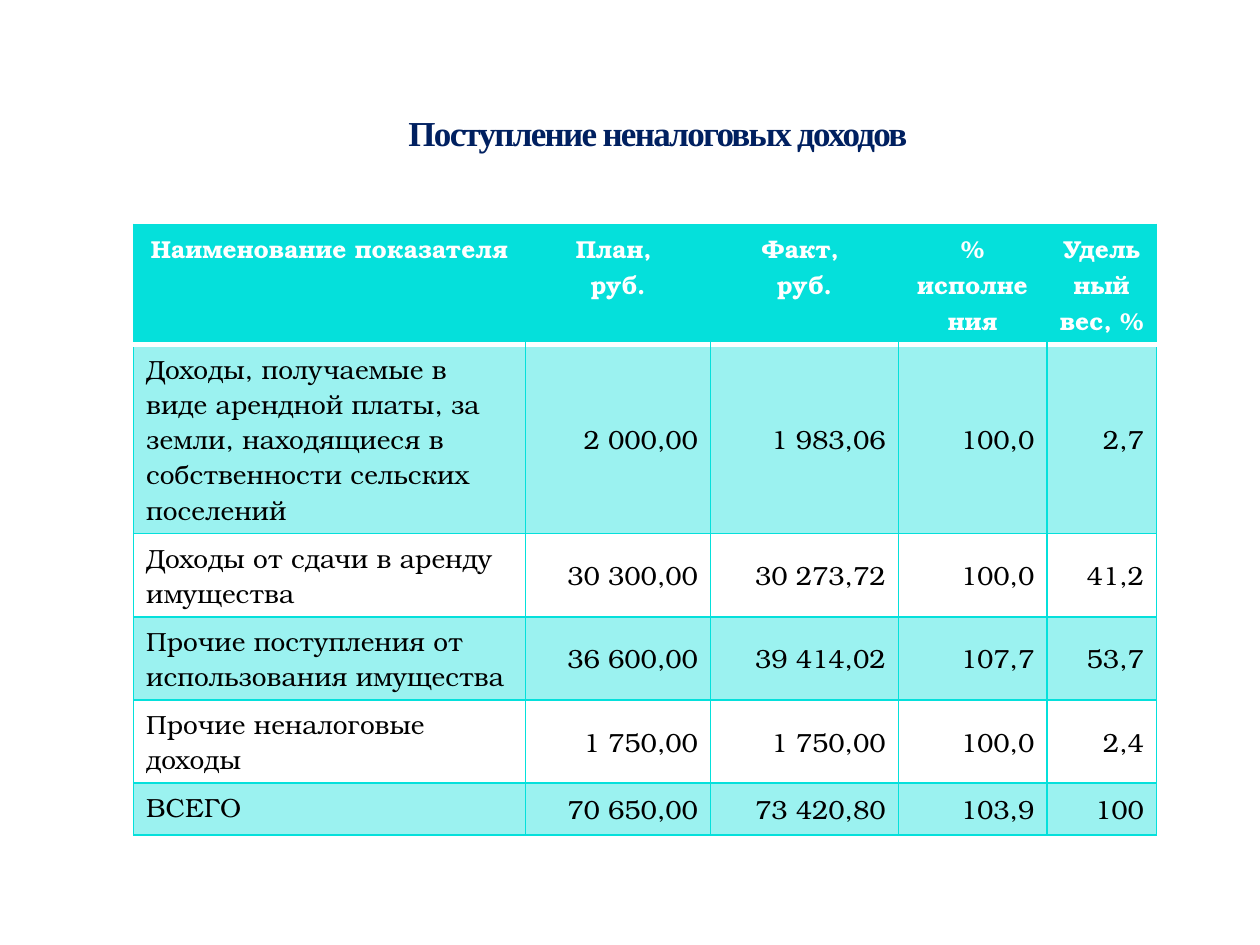
from lxml.etree import SubElement
from pptx import Presentation
from pptx.dml.color import RGBColor as RGB
from pptx.enum.text import MSO_ANCHOR as ANCHOR, PP_ALIGN as ALIGN
from pptx.oxml.ns import qn
from pptx.util import Inches, Pt

COLORS = {"accent": "05E0DB", "white": "FFFFFF", "black": "000000",
          "title": "002060", "outline": "AFCCDE"}
COLUMNS = [3.11, 1.47, 1.49, 1.18, 0.87]
HEADER = ["Наименование показателя", "План, \nруб.", "Факт, \nруб.",
          "% исполнения", "Удельный вес, %"]
ROWS = [
    ["Доходы, получаемые в виде арендной платы, за земли, находящиеся в "
     "собственности сельских поселений", "2 000,00", "1 983,06", "100,0", "2,7"],
    ["Доходы от сдачи в аренду имущества",
     "30 300,00", "30 273,72", "100,0", "41,2"],
    ["Прочие поступления от использования имущества",
     "36 600,00", "39 414,02", "107,7", "53,7"],
    ["Прочие неналоговые доходы", "1 750,00", "1 750,00", "100,0", "2,4"],
    ["ВСЕГО", "70 650,00", "73 420,80", "103,9", "100"],
]


def add_solid(parent, color, alpha=100):
    fill = SubElement(parent, qn("a:solidFill"))
    clr = SubElement(fill, qn("a:srgbClr"), val=COLORS[color])
    if alpha < 100:
        SubElement(clr, qn("a:alpha"), val=str(alpha * 1000))


class SlideBuilder:
    title_font = "Times New Roman"
    table_font = "TeX Gyre Bonum"

    def __init__(self, prs):
        self.s = prs.slides.add_slide(prs.slide_layouts[6])

    def style(self, tf, font, size, color, bold, align):
        for p in tf.paragraphs:
            p.alignment = align
            for r in p.runs:
                r.font.name = font
                r.font.size = Pt(size)
                r.font.bold = bold
                r.font.color.rgb = RGB.from_string(COLORS[color])

    def title(self, text, x, y, w, h):
        sp = self.s.shapes.add_textbox(Inches(x), Inches(y), Inches(w), Inches(h))
        tf = sp.text_frame
        tf.word_wrap = True
        tf.vertical_anchor = ANCHOR.MIDDLE
        tf.text = text
        self.style(tf, self.title_font, 20, "title", True, ALIGN.CENTER)
        rpr = tf.paragraphs[0].runs[0].font._element
        rpr.set("spc", "-100")
        ln = SubElement(rpr, qn("a:ln"), w=str(Pt(0.25)))
        add_solid(ln, "outline", 25)
        rpr.insert(0, ln)

    def border(self, cell, side, color, width):
        tcpr = cell._tc.get_or_add_tcPr()
        ln = SubElement(tcpr, qn(f"a:ln{side}"), w=str(Pt(width)))
        if color:
            add_solid(ln, color)
        else:
            SubElement(ln, qn("a:noFill"))

    def cell(self, cell, text, row, col, last_col):
        header = row == 0
        cell.text_frame.text = text
        if header:
            align = ALIGN.CENTER
        else:
            align = ALIGN.RIGHT if col else ALIGN.LEFT
        self.style(cell.text_frame, self.table_font, 14 if header else 15,
                   "white" if header else "black", header, align)
        if col and not header:
            cell.vertical_anchor = ANCHOR.MIDDLE
        line, rule = ("accent", 1), ("white", 3)
        sides = {
            "L": (None, 1) if header and col else line,
            "R": (None, 1) if header and col < last_col else line,
            "T": rule if row == 1 else line,
            "B": rule if header else line,
        }
        for side, (color, width) in sides.items():
            self.border(cell, side, color, width)
        if header:
            cell.fill.solid()
            cell.fill.fore_color.rgb = RGB.from_string(COLORS["accent"])
        elif row % 2:
            add_solid(cell._tc.get_or_add_tcPr(), "accent", 40)
        else:
            cell.fill.background()

    def table(self, rows, widths, x, y, row_height):
        frame = self.s.shapes.add_table(
            len(rows), len(widths), Inches(x), Inches(y),
            Inches(sum(widths)), Inches(row_height * len(rows)))
        table = frame.table
        table.first_row = table.horz_banding = False
        for column, width in zip(table.columns, widths):
            column.width = Inches(width)
        for i, row in enumerate(rows):
            table.rows[i].height = Inches(row_height)
            for j, text in enumerate(row):
                self.cell(table.cell(i, j), text, i, j, len(widths) - 1)


def main():
    prs = Presentation()
    prs.slide_width, prs.slide_height = Inches(10), Inches(7.5)
    slide = SlideBuilder(prs)
    slide.table([HEADER] + ROWS, COLUMNS, 1.06, 1.78, 0.41)
    slide.title("Поступление неналоговых доходов", 1.38, 0.68, 7.68, 0.74)
    prs.save("out.pptx")


if __name__ == "__main__":
    main()
